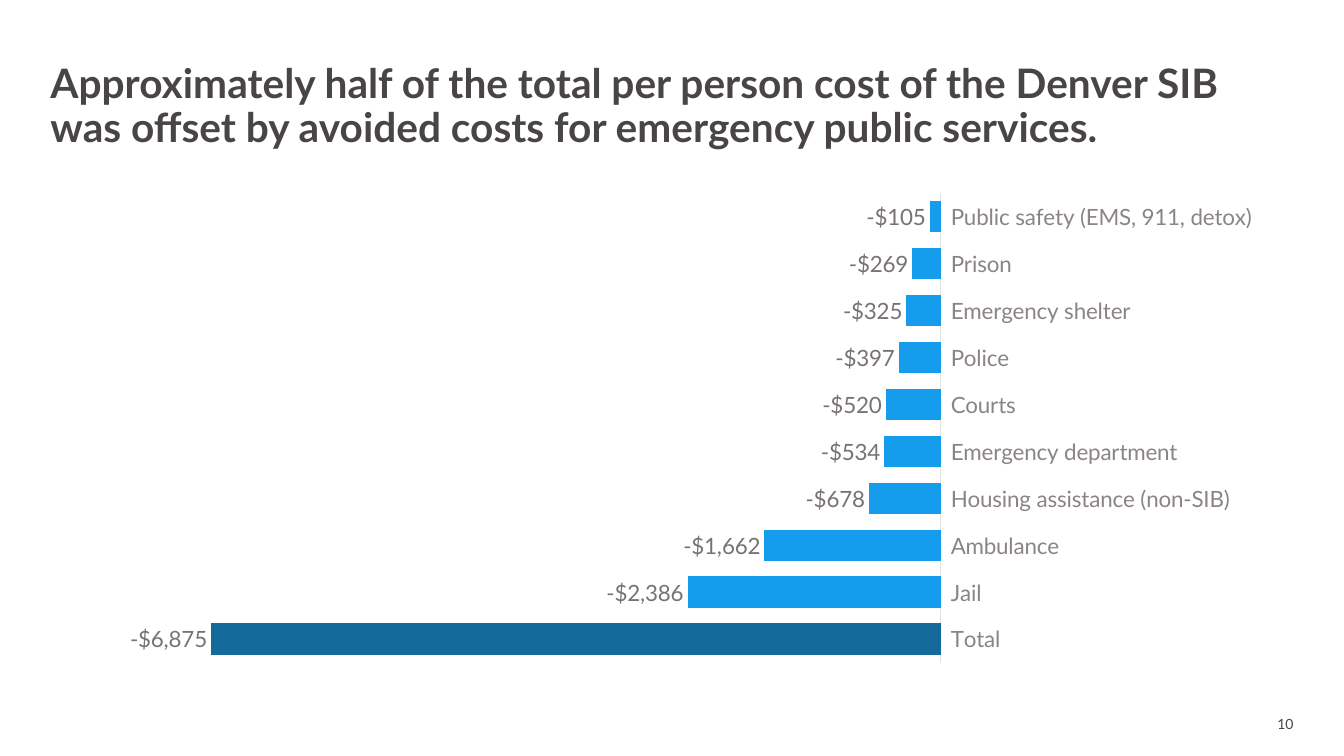
from pptx import Presentation
from pptx.chart.data import CategoryChartData
from pptx.dml.color import RGBColor
from pptx.enum.chart import (XL_CHART_TYPE, XL_LABEL_POSITION, XL_TICK_LABEL_POSITION,
                             XL_TICK_MARK)
from pptx.enum.text import MSO_ANCHOR, MSO_AUTO_SIZE, PP_ALIGN
from pptx.util import Inches, Pt

DARK, GREY, PALE = "494546", "8B8486", "E4E3E3"
LABEL, BLUE, NAVY = "787273", "169CEC", "136A9B"
MONEY = '"$"#,##0'
COSTS = {
    "Public safety (EMS, 911, detox)": -105,
    "Prison": -269,
    "Emergency shelter": -325,
    "Police": -397,
    "Courts": -520,
    "Emergency department": -534,
    "Housing assistance (non-SIB)": -678,
    "Ambulance": -1662,
    "Jail": -2386,
    "Total": -6875,
}


def tint(hue):
    """Turn a hex string into a colour."""
    return RGBColor.from_string(hue)


def apply(item, **values):
    """Set each named attribute on the item."""
    for name, value in values.items():
        setattr(item, name, value)


def style(font, size, hue, bold=False):
    """Set the face, size, weight and colour of a font."""
    apply(font, name="Lato", size=Pt(size), bold=bold)
    font.color.rgb = tint(hue)


def paint(fill, hue):
    """Make a fill solid in one colour."""
    fill.solid()
    fill.fore_color.rgb = tint(hue)


def write(shape, text, size, align, anchor, pad, bold=False):
    """Put one styled paragraph into a shape and return it."""
    frame = shape.text_frame
    apply(frame, word_wrap=True, auto_size=MSO_AUTO_SIZE.NONE, vertical_anchor=anchor,
          margin_left=0, margin_right=0, margin_top=pad, margin_bottom=pad)
    para = frame.paragraphs[0]
    para.text = text
    para.alignment = align
    style(para.runs[0].font, size, DARK, bold)
    return para


def add_title(slide, box, text):
    """Place the headline in the title placeholder."""
    title = slide.shapes.title
    apply(title, **dict(zip(("left", "top", "width", "height"), box)))
    para = write(title, text, 29, PP_ALIGN.LEFT, MSO_ANCHOR.TOP, Inches(0.05), True)
    para.line_spacing = 0.9


def add_costs(slide, box):
    """Place the bar chart of avoided costs."""
    data = CategoryChartData(number_format=MONEY)
    data.categories = list(COSTS)
    data.add_series("Series 1", list(COSTS.values()))
    chart = slide.shapes.add_chart(XL_CHART_TYPE.BAR_CLUSTERED, *box, data).chart
    apply(chart, has_legend=False, has_title=False)
    style(chart.font, 16, DARK)

    names = chart.category_axis
    apply(names, reverse_order=True, has_major_gridlines=False,
          major_tick_mark=XL_TICK_MARK.NONE, minor_tick_mark=XL_TICK_MARK.NONE,
          tick_label_position=XL_TICK_LABEL_POSITION.HIGH)
    style(names.tick_labels.font, 16, GREY)
    names.format.line.width = Pt(0.75)
    paint(names.format.line.fill, PALE)
    apply(chart.value_axis, visible=False, has_major_gridlines=False,
          minimum_scale=-8000, maximum_scale=0)

    plot = chart.plots[0]
    apply(plot, gap_width=50, vary_by_categories=False, has_data_labels=True)
    apply(plot.data_labels, show_value=True, number_format=MONEY,
          number_format_is_linked=False, position=XL_LABEL_POSITION.OUTSIDE_END)
    style(plot.data_labels.font, 16, LABEL)
    bars = plot.series[0]
    bars.invert_if_negative = False
    paint(bars.format.fill, BLUE)
    paint(bars.points[len(COSTS) - 1].format.fill, NAVY)


def add_number(slide, box, text):
    """Place the page number."""
    write(slide.shapes.add_textbox(*box), text, 10, PP_ALIGN.RIGHT, MSO_ANCHOR.MIDDLE, 0)


def main():
    """Build and save the slide."""
    deck = Presentation()
    apply(deck, slide_width=Inches(13.33), slide_height=Inches(7.5))
    slide = deck.slides.add_slide(deck.slide_layouts[5])
    add_title(slide, [Inches(n) for n in (0.5, 0.58, 12.33, 1.27)],
              "Approximately half of the total per person cost of the Denver SIB "
              "was offset by avoided costs for emergency public services.")
    add_costs(slide, [Inches(n) for n in (0.67, 1.82, 11.99, 4.85)])
    add_number(slide, [Inches(n) for n in (9.83, 7.07, 3, 0.23)], "10")
    deck.save("out.pptx")


if __name__ == "__main__":
    main()
